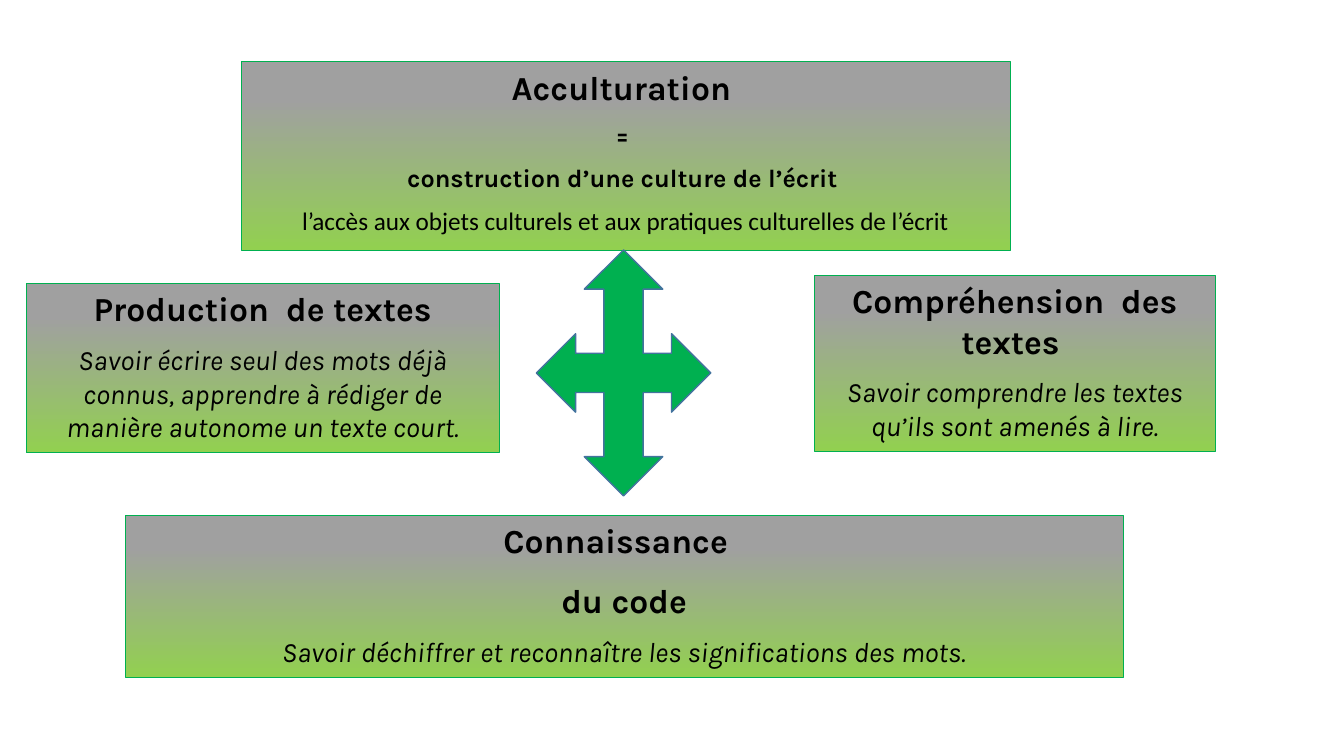
import copy

import pptx
import pptx.dml.color
import pptx.enum.shapes
import pptx.enum.text
import pptx.util

Inches = pptx.util.Inches
Pt = pptx.util.Pt
RGBColor = pptx.dml.color.RGBColor
MSO_SHAPE = pptx.enum.shapes.MSO_SHAPE

LIME = RGBColor(0x92, 0xD0, 0x50)
GREY = RGBColor(0xA0, 0xA0, 0xA0)
LIGHT_GREY = RGBColor(0xA1, 0xA1, 0xA1)
GREEN = RGBColor(0x00, 0xB0, 0x50)
BLUE = RGBColor(0x43, 0x73, 0x9E)
BLACK = RGBColor(0, 0, 0)

GRADIENT = [(0, LIME), (0.8, GREY), (1, LIGHT_GREY)]
HALF_LINE = 0.5
FIXED_GAP = Pt(14)

STYLES = {
    "title": ("Karla", 24, True, False),
    "subtitle": ("Karla", 18, True, False),
    "detail": ("Calibri", 18, False, False),
    "goal": ("Karla", 20, False, True),
}

CONCEPTS = [
    ((1.24, 5.11, 9.9, 1.61), [
        ("title", FIXED_GAP, "Connaissance  "),
        ("title", FIXED_GAP, "du code"),
        ("goal", HALF_LINE, "Savoir déchiffrer et reconnaître les significations des mots."),
    ]),
    ((8.08, 2.73, 3.97, 1.75), [
        ("title", FIXED_GAP, "Compréhension  des textes "),
        ("goal", HALF_LINE, "Savoir comprendre les textes qu’ils sont amenés à lire."),
    ]),
    ((0.26, 2.81, 4.69, 1.68), [
        ("title", HALF_LINE, "Production  de textes"),
        ("goal", HALF_LINE, "Savoir écrire seul des mots déjà connus, apprendre à rédiger "
                            "de manière autonome un texte court."),
    ]),
    ((2.39, 0.61, 7.63, 1.87), [
        ("title", HALF_LINE, "Acculturation "),
        ("subtitle", HALF_LINE, "= "),
        ("subtitle", HALF_LINE, "construction d’une culture de l’écrit "),
        ("detail", HALF_LINE, " l’accès aux objets culturels et aux pratiques culturelles de l’écrit "),
    ]),
]
ARROW_BOX = (5.32, 2.48, 1.73, 2.44)


def add_outlined_shape(slide, kind, box, line_color, line_width):
    shape = slide.shapes.add_shape(kind, *map(Inches, box))
    shape.shadow.inherit = False
    shape.line.color.rgb = line_color
    shape.line.width = Pt(line_width)
    return shape


def fill_gradient(fill):
    fill.gradient()
    fill.gradient_angle = 90
    last_stop = fill.gradient_stops[-1]._gs
    last_stop.addnext(copy.deepcopy(last_stop))
    for stop, (position, color) in zip(fill.gradient_stops, GRADIENT):
        stop.position = position
        stop.color.rgb = color


def write_paragraph(paragraph, style, gap, text):
    paragraph.text = text
    paragraph.alignment = pptx.enum.text.PP_ALIGN.CENTER
    if gap == HALF_LINE:
        paragraph._p.get_or_add_pPr().get_or_add_spcBef().set_spcPct(gap)
    else:
        paragraph.space_before = gap
    font = paragraph.font
    font.name, size, font.bold, font.italic = STYLES[style]
    font.size = Pt(size)
    font.color.rgb = BLACK


def add_concept(slide, box, lines):
    shape = add_outlined_shape(slide, MSO_SHAPE.RECTANGLE, box, GREEN, 0.5)
    fill_gradient(shape.fill)
    frame = shape.text_frame
    frame.word_wrap = True
    frame.auto_size = pptx.enum.text.MSO_AUTO_SIZE.SHAPE_TO_FIT_TEXT
    frame.vertical_anchor = pptx.enum.text.MSO_ANCHOR.TOP
    for index, line in enumerate(lines):
        paragraph = frame.add_paragraph() if index else frame.paragraphs[0]
        write_paragraph(paragraph, *line)


def add_link_arrow(slide, box):
    arrow = add_outlined_shape(slide, MSO_SHAPE.QUAD_ARROW, box, BLUE, 1)
    arrow.fill.solid()
    arrow.fill.fore_color.rgb = GREEN


def main():
    presentation = pptx.Presentation()
    presentation.slide_width = Inches(13.33)
    presentation.slide_height = Inches(7.5)
    slide = presentation.slides.add_slide(presentation.slide_layouts[6])
    for box, lines in CONCEPTS:
        add_concept(slide, box, lines)
    add_link_arrow(slide, ARROW_BOX)
    presentation.save("out.pptx")


if __name__ == "__main__":
    main()
